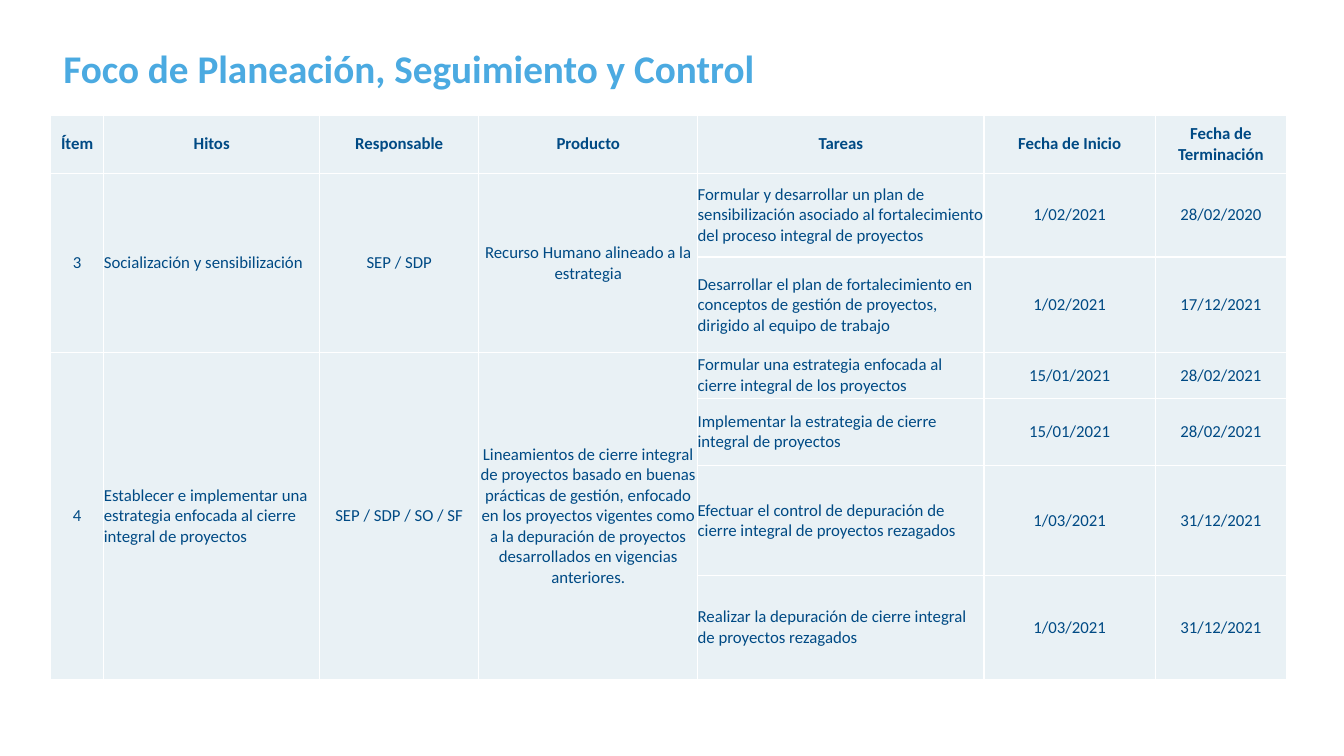
"""Build the planning, follow-up and control slide with its milestone table."""
from dataclasses import dataclass

from lxml import etree
from pptx import Presentation
from pptx import util as u
from pptx.dml.color import RGBColor
from pptx.enum import text
from pptx.oxml.ns import qn

PX = 9144


@dataclass(frozen=True)
class Theme:
    font: str = "Calibri"
    title: str = "4BAAE1"
    ink: str = "004A84"
    cell: str = "E9F1F5"
    border: str = "FFFFFF"
    title_pt: int = 28
    body_pt: int = 12
    border_pt: int = 1


T = Theme()
COLS = [53, 214, 158, 217, 284, 170, 130]
ROWS = [58, 83, 95, 45, 67, 109, 103]
HEADERS = ["Ítem", "Hitos", "Responsable", "Producto", "Tareas",
           "Fecha de Inicio", "Fecha de Terminación"]
LEFT_COLS = (HEADERS.index("Hitos"), HEADERS.index("Tareas"))
MILESTONES = [
    (["3", "Socialización y sensibilización", "SEP / SDP",
      "Recurso Humano alineado a la estrategia"],
     [["Formular y desarrollar un plan de sensibilización asociado al "
       "fortalecimiento del proceso integral de proyectos",
       "1/02/2021", "28/02/2020"],
      ["Desarrollar el plan de fortalecimiento en conceptos de gestión de "
       "proyectos, dirigido al equipo de trabajo",
       "1/02/2021", "17/12/2021"]]),
    (["4", "Establecer e implementar una estrategia enfocada al cierre "
      "integral de proyectos", "SEP / SDP / SO / SF",
      "Lineamientos de cierre integral de proyectos basado en buenas "
      "prácticas de gestión, enfocado en los proyectos vigentes como a la "
      "depuración de proyectos desarrollados en vigencias anteriores."],
     [["Formular una estrategia enfocada al cierre integral de los proyectos",
       "15/01/2021", "28/02/2021"],
      ["Implementar la estrategia de cierre integral de proyectos",
       "15/01/2021", "28/02/2021"],
      ["Efectuar el control de depuración de cierre integral de proyectos "
       "rezagados", "1/03/2021", "31/12/2021"],
      ["Realizar la depuración de cierre integral de proyectos rezagados",
       "1/03/2021", "31/12/2021"]]),
]


def px(*lengths):
    return [u.Emu(n * PX) for n in lengths]


def set_font(p, size, color, bold):
    f = p.font
    f.name, f.size, f.bold = T.font, u.Pt(size), bold
    f.color.rgb = RGBColor.from_string(color)


def add_title(s, words, box):
    sp = s.shapes.add_textbox(*px(*box))
    tf = sp.text_frame
    tf.word_wrap = True
    tf.auto_size = text.MSO_AUTO_SIZE.SHAPE_TO_FIT_TEXT
    p = tf.paragraphs[0]
    p.text = words
    set_font(p, T.title_pt, T.title, True)


def add_borders(cell):
    tc_pr = cell._tc.get_or_add_tcPr()
    for side in ("lnL", "lnR", "lnT", "lnB"):
        ln = etree.SubElement(tc_pr, qn(f"a:{side}"), w=str(u.Pt(T.border_pt)))
        fill = etree.SubElement(ln, qn("a:solidFill"))
        etree.SubElement(fill, qn("a:srgbClr"), val=T.border)


def style_cell(cell, bold, left):
    cell.margin_left = cell.margin_right = 0
    cell.margin_top = cell.margin_bottom = 0
    cell.vertical_anchor = text.MSO_ANCHOR.MIDDLE
    add_borders(cell)
    cell.fill.solid()
    cell.fill.fore_color.rgb = RGBColor.from_string(T.cell)
    p = cell.text_frame.paragraphs[0]
    p.alignment = text.PP_ALIGN.LEFT if left else text.PP_ALIGN.CENTER
    set_font(p, T.body_pt, T.ink, bold)


def fill_row(table, row, first_col, words):
    for c, word in enumerate(words, first_col):
        table.cell(row, c).text = word


def add_milestone_table(s, left, top):
    frame = s.shapes.add_table(len(ROWS), len(COLS),
                               *px(left, top, sum(COLS), sum(ROWS)))
    table = frame.table
    for col, width in zip(table.columns, px(*COLS)):
        col.width = width
    for row, height in zip(table.rows, px(*ROWS)):
        row.height = height
    fill_row(table, 0, 0, HEADERS)
    r = 1
    for summary, tasks in MILESTONES:
        fill_row(table, r, 0, summary)
        for c in range(len(summary)):
            table.cell(r, c).merge(table.cell(r + len(tasks) - 1, c))
        for task in tasks:
            fill_row(table, r, len(summary), task)
            r += 1
    for r in range(len(ROWS)):
        for c in range(len(COLS)):
            style_cell(table.cell(r, c), r == 0, r > 0 and c in LEFT_COLS)


def main():
    prs = Presentation()
    prs.slide_width, prs.slide_height = px(1333, 750)
    s = prs.slides.add_slide(prs.slide_layouts[6])
    add_milestone_table(s, 50, 114)
    add_title(s, "Foco de Planeación, Seguimiento y Control", (53, 39, 917, 57))
    prs.save("out.pptx")


if __name__ == "__main__":
    main()
